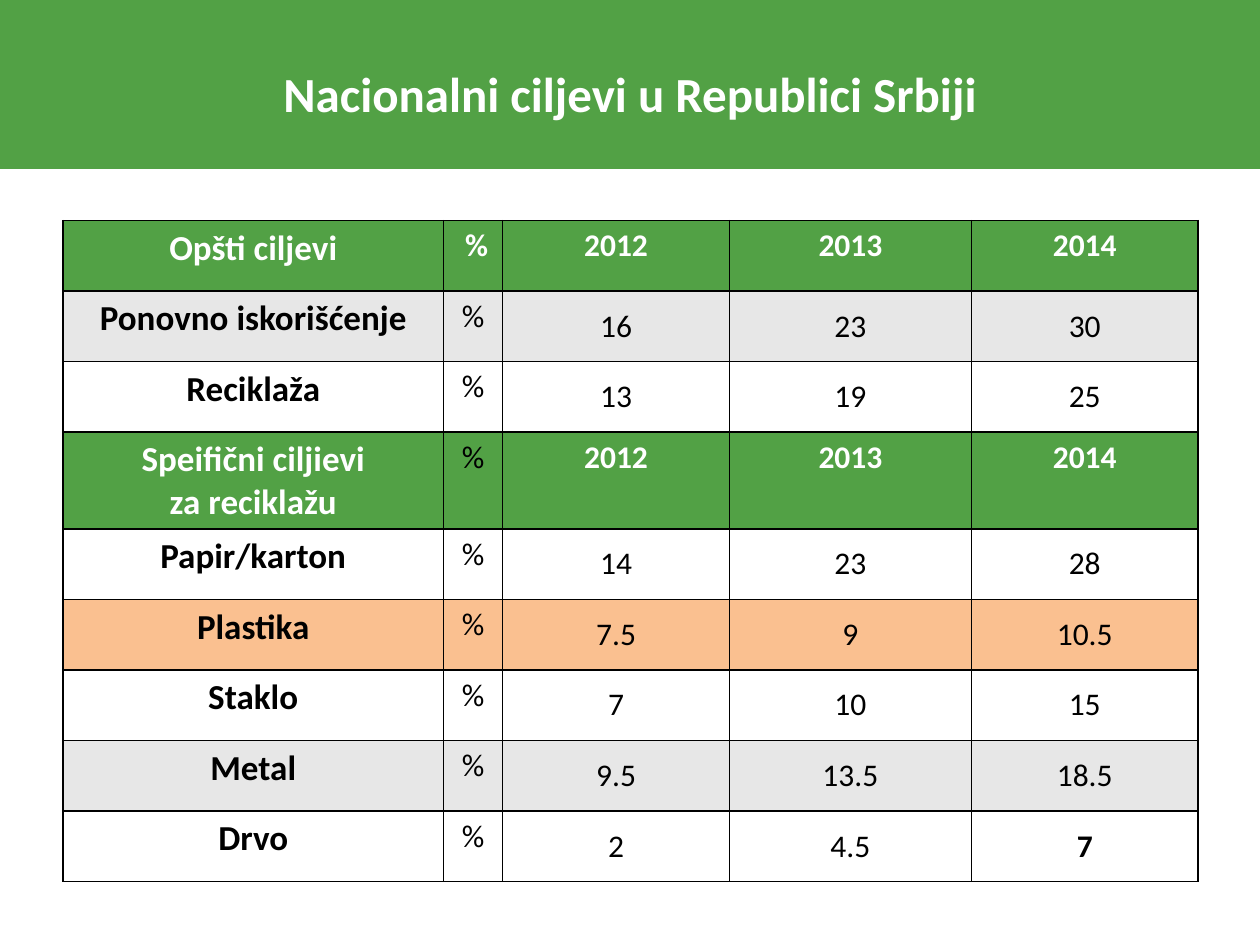
from lxml import etree
from pptx import Presentation
from pptx import util as u
from pptx.dml.color import RGBColor
from pptx.enum import shapes, text
from pptx.oxml.ns import qn

GREEN, GRAY, ORANGE, WHITE, BLACK = "52A145", "E7E7E7", "FAC090", "FFFFFF", "000000"
COLUMN_WIDTHS = [3.02, 0.47, 1.8, 1.92, 1.8]
ROW_HEIGHT = 0.56
YEARS = ["2012", "2013", "2014"]
GOALS = [
    (GREEN, ["Opšti ciljevi", " %", *YEARS]),
    (GRAY, ["Ponovno iskorišćenje", "%", "16", "23", "30"]),
    (WHITE, ["Reciklaža", "%", "13", "19", "25"]),
    (GREEN, ["Speifični ciljievi\vza reciklažu", "%", *YEARS]),
    (WHITE, ["Papir/karton", "%", "14", "23", "28"]),
    (ORANGE, ["Plastika", "%", "7.5", "9", "10.5"]),
    (WHITE, ["Staklo", "%", "7", "10", "15"]),
    (GRAY, ["Metal", "%", "9.5", "13.5", "18.5"]),
    (WHITE, ["Drvo", "%", "2", "4.5", "7"]),
]


def rgb(color):
    return RGBColor.from_string(color)


def paint(fill, color):
    fill.solid()
    fill.fore_color.rgb = rgb(color)


def write(text_frame, words, size, color, bold):
    text_frame.text = words
    paragraph = text_frame.paragraphs[0]
    paragraph.alignment = text.PP_ALIGN.CENTER
    for run in paragraph.runs:
        run.font.name = "Calibri"
        run.font.size = u.Pt(size)
        run.font.bold = bold
        run.font.color.rgb = rgb(color)


def add_banner(slide):
    banner = slide.shapes.add_shape(
        shapes.MSO_SHAPE.RECTANGLE, 0, 0, u.Inches(10), u.Inches(1.33))
    banner.shadow.inherit = False
    paint(banner.fill, GREEN)
    banner.line.color.rgb = rgb(GREEN)
    banner.line.width = u.Pt(2)


def add_title(slide, words):
    box = slide.shapes.add_textbox(
        u.Inches(0.5), u.Inches(0.3), u.Inches(9), u.Inches(0.87))
    box.text_frame.word_wrap = True
    box.text_frame.vertical_anchor = text.MSO_ANCHOR.MIDDLE
    write(box.text_frame, words, 28, WHITE, True)


def add_borders(cell):
    properties = cell._tc.get_or_add_tcPr()
    for side in ("a:lnL", "a:lnR", "a:lnT", "a:lnB"):
        line = etree.SubElement(properties, qn(side), w=str(u.Pt(1)))
        fill = etree.SubElement(line, qn("a:solidFill"))
        etree.SubElement(fill, qn("a:srgbClr"), val=BLACK)


def center_value(cell):
    cell.vertical_anchor = text.MSO_ANCHOR.MIDDLE
    cell.margin_left = cell.margin_right = u.Inches(0.31)
    cell.margin_top = cell.margin_bottom = u.Inches(0.01)


def add_goals_table(slide):
    table = slide.shapes.add_table(
        len(GOALS), len(COLUMN_WIDTHS), u.Inches(0.5), u.Inches(1.75),
        u.Inches(9), u.Inches(ROW_HEIGHT * len(GOALS))).table
    table.first_row = table.horz_banding = False
    for column, width in zip(table.columns, COLUMN_WIDTHS):
        column.width = u.Inches(width)
    for row, (fill, words) in zip(table.rows, GOALS):
        row.height = u.Inches(ROW_HEIGHT)
        header = fill == GREEN
        for index, (cell, word) in enumerate(zip(row.cells, words)):
            plain_unit = word == "%"
            final_wood_goal = words[0] == "Drvo" and index == 4
            bold = index == 0 or header and not plain_unit or final_wood_goal
            color = WHITE if header and not plain_unit else BLACK
            write(cell.text_frame, word, 20 if index == 0 else 18, color, bold)
            if index > 1 and not header:
                center_value(cell)
            add_borders(cell)
            paint(cell.fill, fill)


def main():
    presentation = Presentation()
    presentation.slide_width = u.Inches(10)
    presentation.slide_height = u.Inches(7.5)
    slide = presentation.slides.add_slide(presentation.slide_layouts[6])
    paint(slide.background.fill, WHITE)
    add_banner(slide)
    add_title(slide, "Nacionalni ciljevi u Republici Srbiji")
    add_goals_table(slide)
    presentation.save("out.pptx")


if __name__ == "__main__":
    main()
